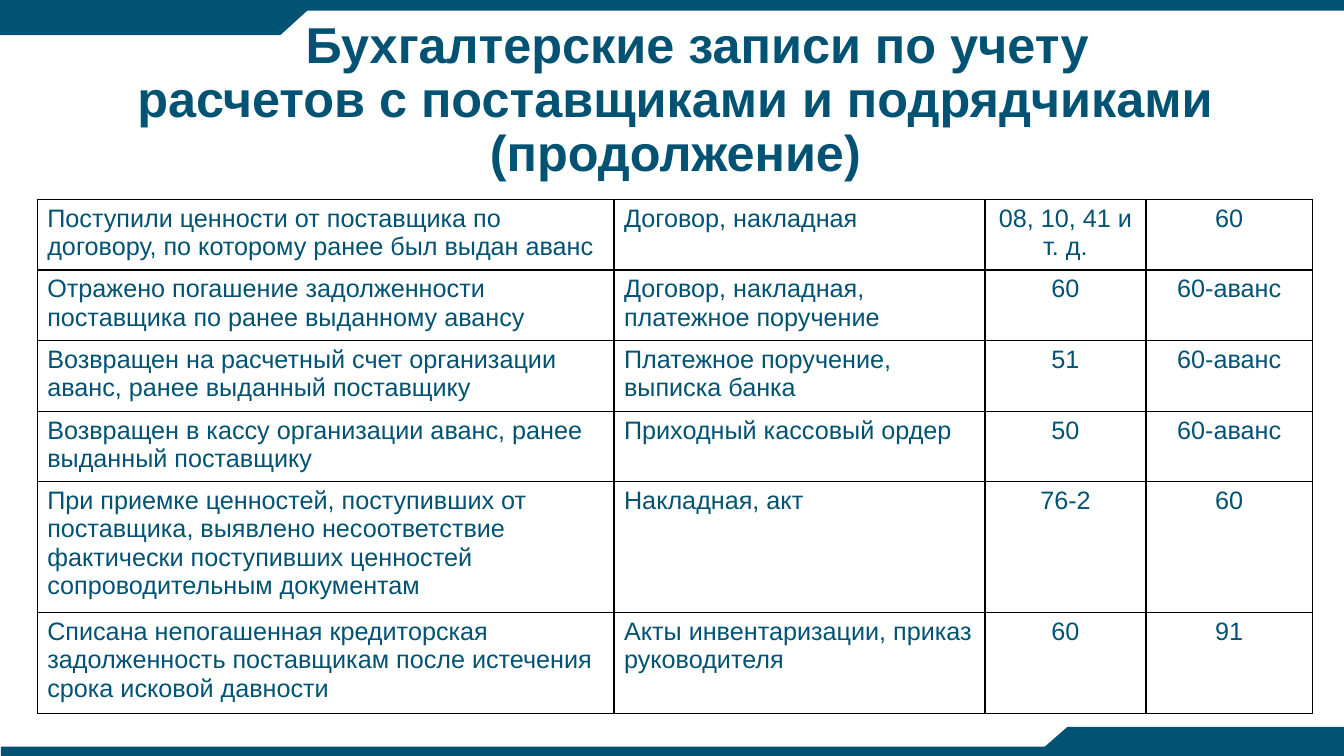
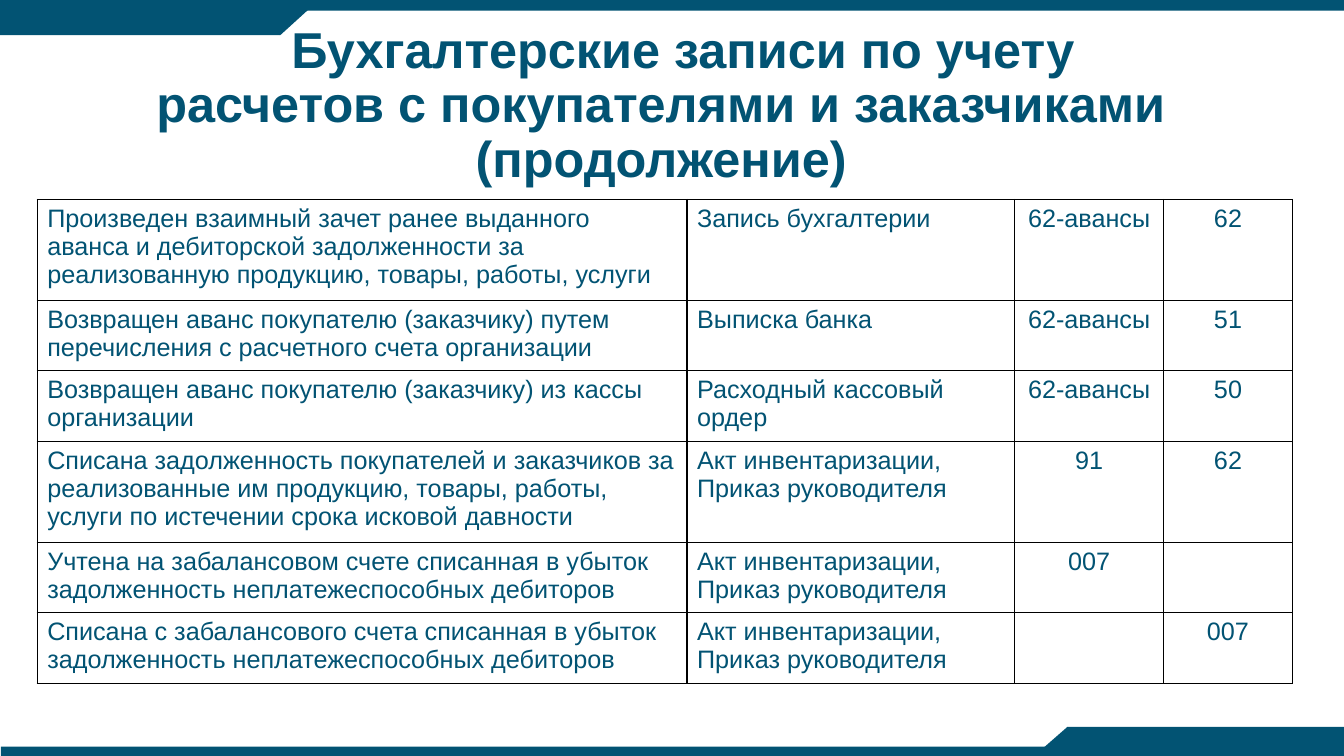
from lxml.etree import SubElement
from pptx import Presentation
from pptx.dml.color import RGBColor
from pptx.enum.shapes import MSO_SHAPE
from pptx.enum.text import MSO_ANCHOR, PP_ALIGN
from pptx.oxml.ns import qn
from pptx.util import Pt

# Shared look
TEAL = RGBColor(0x02, 0x53, 0x73)
BLACK = RGBColor(0, 0, 0)
FONT = "Arial"
WIDTH, HEIGHT = 960, 540
TITLE_SIZE, TITLE_HEIGHT, INDENT = 36, 118, 31.5
CELL_SIZE, LINE, PAD = 18, 20.2, 7.2
TABLE_LEFT, TABLE_TOP = 26.6, 142.4

# Bands: shape, left, top, width, height, rotation
RECT, MERGE = MSO_SHAPE.RECTANGLE, MSO_SHAPE.FLOWCHART_MERGE
BANDS = [
    (RECT, 0, 0, WIDTH, 7.7, 0),
    (RECT, 0.7, 533.3, WIDTH - 0.7, 6.7, 0),
    (RECT, 0, 3.6, 200, 21.6, 0),
    (MERGE, 176.4, 3.6, 47.5, 21.6, 0),
    (RECT, 762.5, 519.2, 197.5, 20.8, 0),
    (MERGE, 738.7, 519.2, 47.5, 20.8, 180),
]

# Content: each row is the operation, document, debit, credit
SLIDES = [
    {
        "title": ["Бухгалтерские записи по учету",
                  "расчетов с поставщиками и подрядчиками (продолжение)"],
        "box": (5.8, 13.3, 953.3),
        "cols": [412, 265, 115, 119],
        "lines": [2, 2, 2, 2, 4, 3],
        "rows": [
            ("Поступили ценности от поставщика по договору, по которому "
             "ранее был выдан аванс",
             "Договор, накладная", "08, 10, 41 и т. д.", "60"),
            ("Отражено погашение задолженности поставщика по ранее "
             "выданному авансу",
             "Договор, накладная, платежное поручение", "60", "60-аванс"),
            ("Возвращен на расчетный счет организации аванс, ранее "
             "выданный поставщику",
             "Платежное поручение, выписка банка", "51", "60-аванс"),
            ("Возвращен в кассу организации аванс, ранее выданный "
             "поставщику",
             "Приходный кассовый ордер", "50", "60-аванс"),
            ("При приемке ценностей, поступивших от поставщика, выявлено "
             "несоответствие фактически поступивших ценностей "
             "сопроводительным документам",
             "Накладная, акт", "76-2", "60"),
            ("Списана непогашенная кредиторская задолженность поставщикам "
             "после истечения срока исковой давности",
             "Акты инвентаризации, приказ руководителя", "60", "91"),
        ],
    },
    {
        "title": ["Бухгалтерские записи по учету",
                  "расчетов с покупателями и заказчиками (продолжение)"],
        "box": (58.3, 16.9, 828),
        "cols": [464.2, 234, 106.4, 92],
        "lines": [3, 2, 2, 3, 2, 2],
        "rows": [
            ("Произведен взаимный зачет ранее выданного аванса и "
             "дебиторской задолженности за реализованную продукцию, "
             "товары, работы, услуги",
             "Запись бухгалтерии", "62-авансы", "62"),
            ("Возвращен аванс покупателю (заказчику) путем перечисления "
             "с расчетного счета организации",
             "Выписка банка", "62-авансы", "51"),
            ("Возвращен аванс покупателю (заказчику) из кассы организации",
             "Расходный кассовый ордер", "62-авансы", "50"),
            ("Списана задолженность покупателей и заказчиков за "
             "реализованные им продукцию, товары, работы, услуги по "
             "истечении срока исковой давности",
             "Акт инвентаризации, Приказ руководителя", "91", "62"),
            ("Учтена на забалансовом счете списанная в убыток "
             "задолженность неплатежеспособных дебиторов",
             "Акт инвентаризации, Приказ руководителя", "007", ""),
            ("Списана с забалансового счета списанная в убыток "
             "задолженность неплатежеспособных дебиторов",
             "Акт инвентаризации, Приказ руководителя", "", "007"),
        ],
    },
]


def style(font, size, bold=False):
    font.name, font.size, font.bold = FONT, Pt(size), bold
    font.color.rgb = TEAL


def add_bands(slide):
    for kind, left, top, width, height, turn in BANDS:
        band = slide.shapes.add_shape(
            kind, Pt(left), Pt(top), Pt(width), Pt(height))
        band.rotation = turn
        band.shadow.inherit = False
        band.fill.solid()
        band.fill.fore_color.rgb = TEAL
        band.line.fill.background()


def add_title(slide, lines, box):
    left, top, width = box
    frame = slide.shapes.add_textbox(
        Pt(left), Pt(top), Pt(width), Pt(TITLE_HEIGHT)).text_frame
    frame.word_wrap = True
    frame.vertical_anchor = MSO_ANCHOR.MIDDLE
    para = frame.paragraphs[0]
    para.alignment = PP_ALIGN.CENTER
    para.line_spacing = 0.9
    para._p.get_or_add_pPr().set("indent", str(Pt(INDENT)))
    for index, line in enumerate(lines):
        if index:
            para.add_line_break()
        run = para.add_run()
        run.text = line
        style(run.font, TITLE_SIZE, True)


def add_borders(cell):
    props = cell._tc.get_or_add_tcPr()
    for side in ("a:lnL", "a:lnR", "a:lnT", "a:lnB"):
        edge = SubElement(props, qn(side), w=str(Pt(1)))
        fill = SubElement(edge, qn("a:solidFill"))
        SubElement(fill, qn("a:srgbClr"), val=str(BLACK))


def fill_cell(cell, text, centred):
    add_borders(cell)
    cell.fill.background()
    para = cell.text_frame.paragraphs[0]
    if centred:
        para.alignment = PP_ALIGN.CENTER
    style(para.font, CELL_SIZE)
    if text:
        run = para.add_run()
        run.text = text
        style(run.font, CELL_SIZE)


def add_entries(slide, rows, cols, lines):
    heights = [PAD + LINE * count for count in lines]
    table = slide.shapes.add_table(
        len(rows), len(cols), Pt(TABLE_LEFT), Pt(TABLE_TOP),
        Pt(sum(cols)), Pt(sum(heights))).table
    table.first_row = table.horz_banding = False
    for col, width in zip(table.columns, cols):
        col.width = Pt(width)
    for row, height, texts in zip(table.rows, heights, rows):
        row.height = Pt(height)
        for index, text in enumerate(texts):
            fill_cell(row.cells[index], text, index >= 2)


def main():
    deck = Presentation()
    deck.slide_width, deck.slide_height = Pt(WIDTH), Pt(HEIGHT)
    for data in SLIDES:
        slide = deck.slides.add_slide(deck.slide_layouts[6])
        add_bands(slide)
        add_title(slide, data["title"], data["box"])
        add_entries(slide, data["rows"], data["cols"], data["lines"])
    deck.save("out.pptx")


if __name__ == "__main__":
    main()
